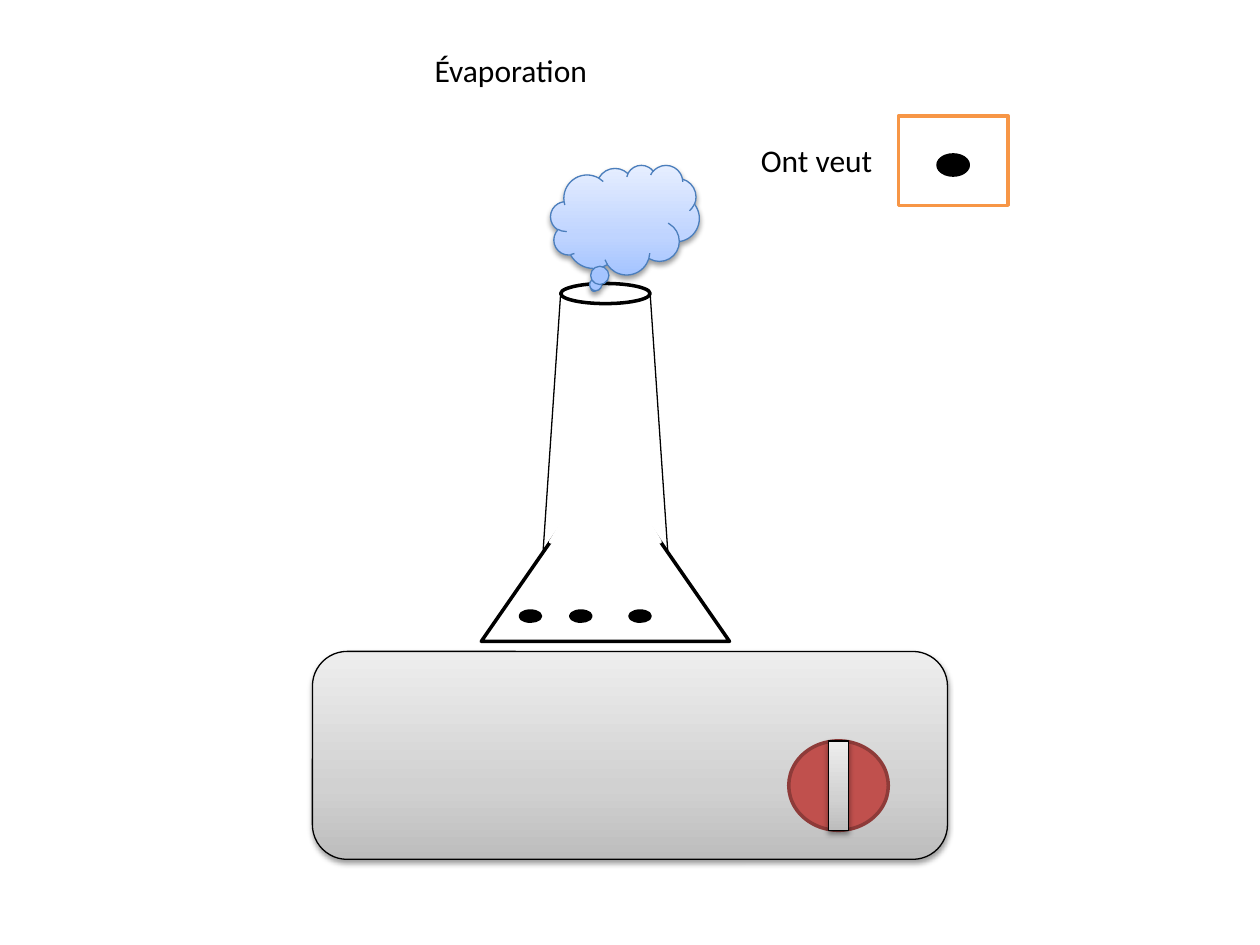
import pptx
import pptx.dml.color
import pptx.enum.shapes
import pptx.enum.text
import pptx.oxml
import pptx.oxml.ns
import pptx.util

Inches = pptx.util.Inches
Pt = pptx.util.Pt
RGBColor = pptx.dml.color.RGBColor
SHAPE = pptx.enum.shapes.MSO_SHAPE

BLACK = RGBColor(0x00, 0x00, 0x00)
WHITE = RGBColor(0xFF, 0xFF, 0xFF)
RED = RGBColor(0xC0, 0x50, 0x4D)
DARK_RED = RGBColor(0x8E, 0x3B, 0x39)
ORANGE = RGBColor(0xF7, 0x96, 0x46)
BLUE = RGBColor(0x4B, 0x7E, 0xBC)
METAL = [(0, RGBColor(0xBD, 0xBD, 0xBD)), (35, RGBColor(0xD1, 0xD1, 0xD1)),
         (100, RGBColor(0xEE, 0xEE, 0xEE))]
VAPOUR = [(0, RGBColor(0xA4, 0xC4, 0xFF)), (35, RGBColor(0xBF, 0xD4, 0xFF)),
          (100, RGBColor(0xE6, 0xEE, 0xFF))]
NAMESPACE = pptx.oxml.ns.nsdecls("a")


def add_plain(page, kind, left, top, width, height, fill, line, weight=2):
    shape = page.shapes.add_shape(kind, Inches(left), Inches(top),
                                  Inches(width), Inches(height))
    shape.shadow.inherit = False
    shape.fill.solid()
    shape.fill.fore_color.rgb = fill
    shape.line.color.rgb = line
    shape.line.width = Pt(weight)
    return shape


def add_shaded(page, kind, left, top, width, height, stops, line):
    """Add a shape with a gradient from bottom to top and a soft shadow below."""
    shape = add_plain(page, kind, left, top, width, height, WHITE, line, 0.75)
    shape.fill.gradient()
    shape.fill.gradient_angle = 90
    properties = shape._element.spPr
    stop_list = properties.find(".//" + pptx.oxml.ns.qn("a:gsLst"))
    for old_stop in list(stop_list):
        stop_list.remove(old_stop)
    for position, colour in stops:
        stop_list.append(pptx.oxml.parse_xml(
            f'<a:gs {NAMESPACE} pos="{position * 1000}"><a:srgbClr val="{colour}"/></a:gs>'))
    properties.find(pptx.oxml.ns.qn("a:effectLst")).append(pptx.oxml.parse_xml(
        f'<a:outerShdw {NAMESPACE} blurRad="{Pt(3.1)}" dist="{Pt(1.6)}" dir="5400000" '
        'rotWithShape="0"><a:srgbClr val="000000"><a:alpha val="38000"/></a:srgbClr>'
        '</a:outerShdw>'))
    return shape


def add_label(page, text, left, top, width, height):
    box = page.shapes.add_textbox(Inches(left), Inches(top), Inches(width), Inches(height))
    frame = box.text_frame
    frame.word_wrap = True
    frame.auto_size = pptx.enum.text.MSO_AUTO_SIZE.SHAPE_TO_FIT_TEXT
    frame.text = text
    font = frame.paragraphs[0].runs[0].font
    font.name = "Calibri"
    font.size = Pt(18)
    font.color.rgb = BLACK


def add_edge(page, start, end):
    edge = page.shapes.add_connector(pptx.enum.shapes.MSO_CONNECTOR.STRAIGHT,
                                     *map(Inches, start + end))
    edge.line.color.rgb = BLACK
    edge.line.width = Pt(0.75)
    edge._element.spPr.append(pptx.oxml.parse_xml(f"<a:effectLst {NAMESPACE}/>"))


def add_hot_plate(page, left, top, width, height):
    add_shaded(page, SHAPE.ROUNDED_RECTANGLE, left, top, width, height, METAL, BLACK)
    knob_left, knob_top = left + 3.78, top + 0.71
    knob_width, knob_height, grip_width = 0.79, 0.71, 0.16
    add_plain(page, SHAPE.OVAL, knob_left, knob_top, knob_width, knob_height, RED, DARK_RED)
    add_shaded(page, SHAPE.RECTANGLE, knob_left + (knob_width - grip_width) / 2, knob_top,
               grip_width, knob_height, METAL, BLACK)


def add_flask(page, left, top, width, height):
    """Draw a flask: a triangle whose tip is hidden in white, under a flared neck."""
    bottom, centre = top + height, left + width / 2
    body_height, mouth_width, mouth_height, neck_width = 1.42, 0.71, 0.16, 0.99
    add_plain(page, SHAPE.ISOSCELES_TRIANGLE, left, bottom - body_height,
              width, body_height, WHITE, BLACK)
    add_plain(page, SHAPE.OVAL, centre - mouth_width / 2, top,
              mouth_width, mouth_height, WHITE, BLACK)
    for side in (-0.5, 0.5):
        add_edge(page, (centre + side * mouth_width, top + mouth_height / 2),
                 (centre + side * neck_width, bottom - 0.71))
    add_plain(page, SHAPE.ISOSCELES_TRIANGLE, centre - 0.435, bottom - 1.5,
              0.87, 0.71, WHITE, WHITE)
    for offset in (0.31, 0.71, 1.18):
        add_plain(page, SHAPE.OVAL, left + offset, bottom - 0.24, 0.16, 0.08, BLACK, BLACK)


def add_wanted_particle(page, left, top, width, height):
    add_label(page, "Ont veut", left, top + 0.15, 2.6, 0.4)
    frame_width, dot_width, dot_height = 0.87, 0.24, 0.16
    frame_left = left + width - frame_width
    add_plain(page, SHAPE.RECTANGLE, frame_left, top, frame_width, height, WHITE, ORANGE)
    add_plain(page, SHAPE.OVAL, frame_left + (frame_width - dot_width) / 2,
              top + 0.31, dot_width, dot_height, BLACK, BLACK)


def main():
    deck = pptx.Presentation()
    deck.slide_width, deck.slide_height = Inches(10), Inches(7.5)
    page = deck.slides.add_slide(deck.slide_layouts[6])
    add_label(page, "Évaporation", 3.35, 0.36, 5.98, 0.4)
    add_hot_plate(page, 2.48, 5.17, 5.04, 1.65)
    add_flask(page, 3.82, 2.25, 1.97, 2.84)
    add_shaded(page, SHAPE.CLOUD_CALLOUT, 4.37, 1.31, 1.18, 0.87, VAPOUR, BLUE)
    add_wanted_particle(page, 5.94, 0.92, 2.06, 0.71)
    deck.save("out.pptx")


if __name__ == "__main__":
    main()
